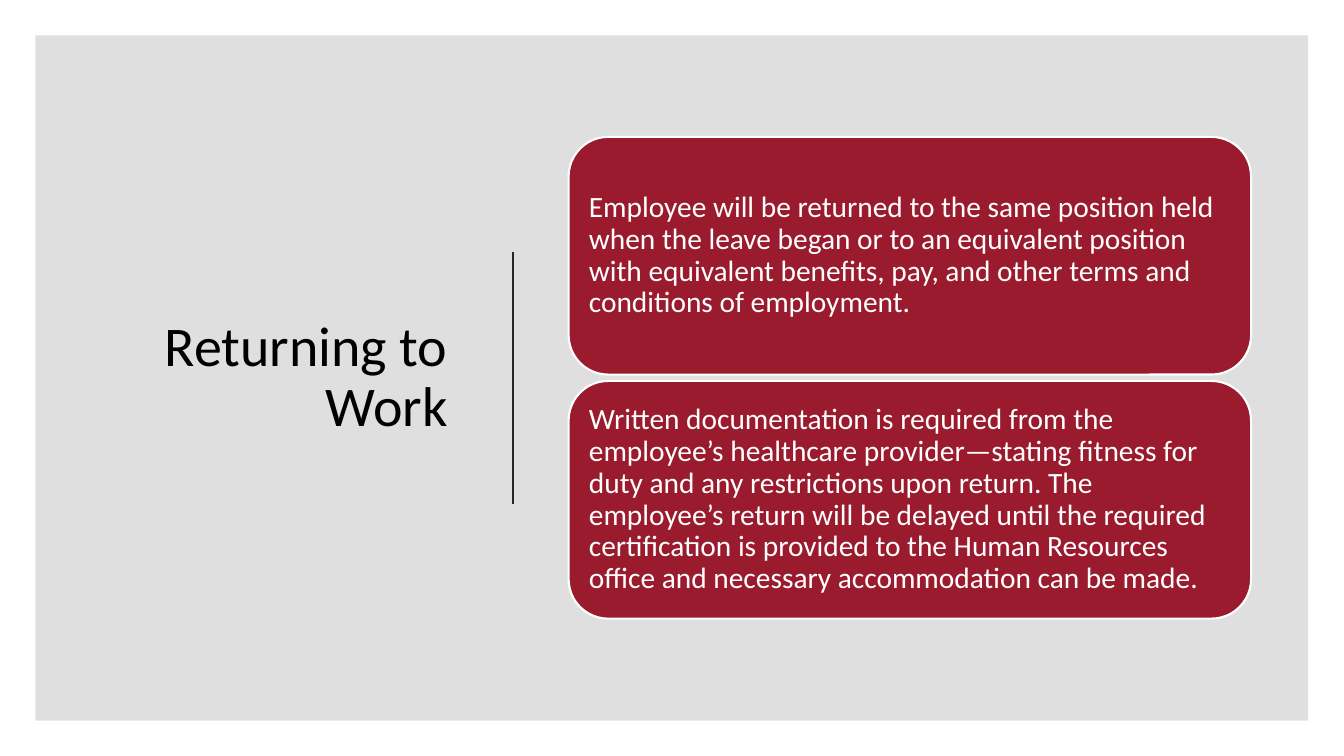
from lxml.etree import SubElement
from pptx import Presentation
from pptx.dml.color import RGBColor
from pptx.enum.shapes import MSO_CONNECTOR, MSO_SHAPE
from pptx.enum.text import MSO_ANCHOR, PP_ALIGN
from pptx.oxml.ns import qn
from pptx.util import Cm, Pt

CARD_TEXTS = [
    "Employee will be returned to the same position held when the leave began "
    "or to an equivalent position with equivalent benefits, pay, and other "
    "terms and conditions of employment.",
    "Written documentation is required from the employee’s healthcare "
    "provider—stating fitness for duty and any restrictions upon return. "
    "The employee’s return will be delayed until the required certification "
    "is provided to the Human Resources office and necessary accommodation "
    "can be made.",
]
CARD_TOP, CARD_HEIGHT, CARD_GAP = 3.45, 5.99, 0.16


def rgb(hex_color):
    return RGBColor.from_string(hex_color)


class SlideBuilder:
    """Places styled elements on one slide; lengths are in centimetres."""

    font = "Calibri"
    panel_color, panel_opacity = "CBCBCB", 60
    card_color, card_text_color = "991B2D", "FFFFFF"
    title_color, divider_color = "000000", "262626"
    line_width = Pt(1.5)

    def __init__(self, slide):
        self.s = slide

    def add_text(self, shape, text, size, color, align, inset):
        tf = shape.text_frame
        tf.word_wrap = True
        tf.vertical_anchor = MSO_ANCHOR.MIDDLE
        tf.margin_left = tf.margin_right = Cm(inset)
        tf.margin_top = tf.margin_bottom = Cm(inset)
        p = tf.paragraphs[0]
        p.alignment = align
        p.line_spacing = 0.9
        r = p.add_run()
        r.text = text
        r.font.name = self.font
        r.font.size = Pt(size)
        r.font.color.rgb = rgb(color)

    def filled_shape(self, kind, x, y, w, h, color):
        sp = self.s.shapes.add_shape(kind, Cm(x), Cm(y), Cm(w), Cm(h))
        sp.shadow.inherit = False
        sp.fill.solid()
        sp.fill.fore_color.rgb = rgb(color)
        return sp

    def panel(self, x, y, w, h):
        """Add the translucent backdrop."""
        sp = self.filled_shape(MSO_SHAPE.RECTANGLE, x, y, w, h, self.panel_color)
        sp.line.fill.background()
        color = sp._element.spPr.find(qn("a:solidFill"))[0]
        SubElement(color, qn("a:alpha"), val=str(self.panel_opacity * 1000))

    def title(self, text, x, y, w, h):
        sp = self.s.shapes.add_textbox(Cm(x), Cm(y), Cm(w), Cm(h))
        self.add_text(sp, text, 40, self.title_color, PP_ALIGN.RIGHT, 0.25)

    def divider(self, x, top, bottom):
        line = self.s.shapes.add_connector(
            MSO_CONNECTOR.STRAIGHT, Cm(x), Cm(top), Cm(x), Cm(bottom))
        line.line.color.rgb = rgb(self.divider_color)
        line.line.width = self.line_width
        SubElement(line._element.spPr, qn("a:effectLst"))

    def card(self, text, x, y, w, h):
        sp = self.filled_shape(
            MSO_SHAPE.ROUNDED_RECTANGLE, x, y, w, h, self.card_color)
        sp.line.color.rgb = rgb(self.card_text_color)
        sp.line.width = self.line_width
        self.add_text(sp, text, 21, self.card_text_color, PP_ALIGN.LEFT, 0.22)


def main():
    prs = Presentation()
    prs.slide_width, prs.slide_height = Cm(33.87), Cm(19.05)
    builder = SlideBuilder(prs.slides.add_slide(prs.slide_layouts[6]))
    builder.panel(0.89, 0.89, 32.08, 17.27)
    builder.title("Returning to Work", 2.34, 2.97, 9.19, 13.13)
    builder.divider(12.93, 6.35, 12.7)
    for i, text in enumerate(CARD_TEXTS):
        y = CARD_TOP + i * (CARD_HEIGHT + CARD_GAP)
        builder.card(text, 14.33, y, 17.2, CARD_HEIGHT)
    prs.save("out.pptx")


if __name__ == "__main__":
    main()
